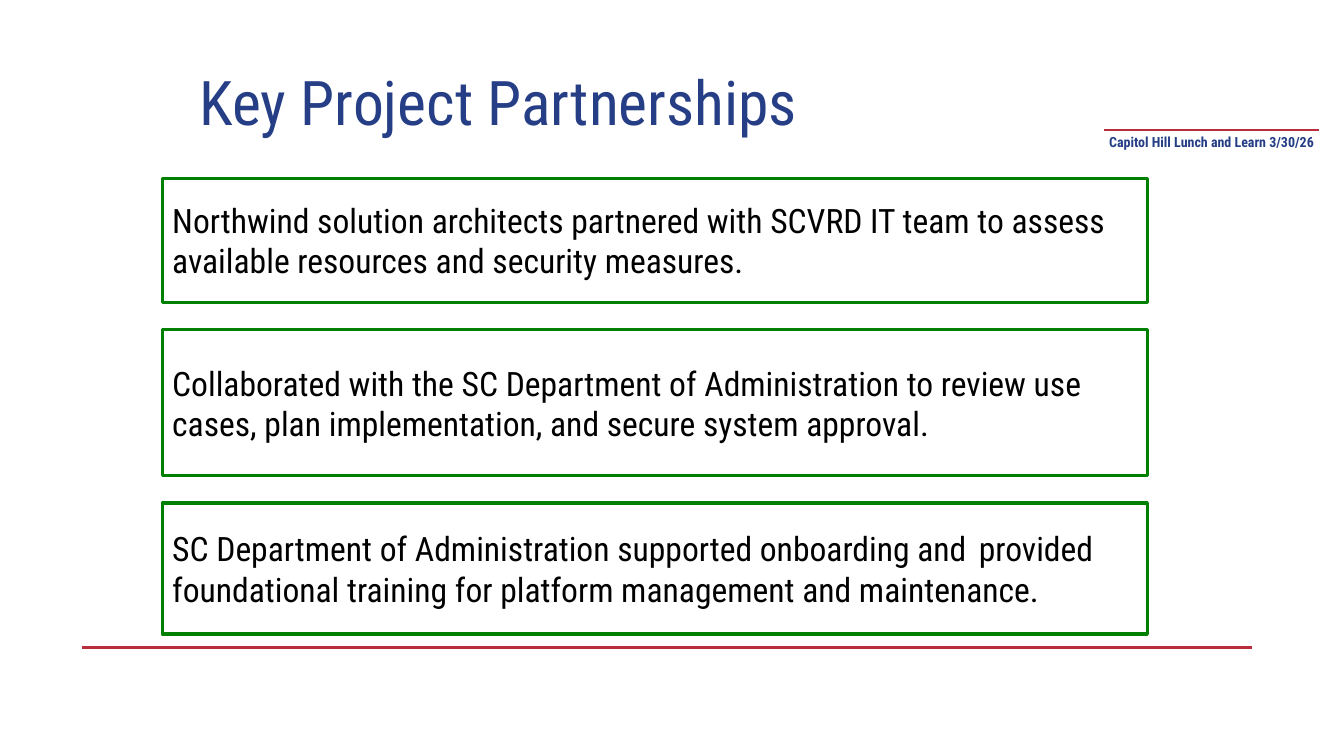
from lxml.etree import SubElement
from pptx import Presentation
from pptx.dml.color import RGBColor
from pptx.enum.shapes import MSO_CONNECTOR as CONNECTOR, MSO_SHAPE as SHAPE
from pptx.enum.text import MSO_ANCHOR as ANCHOR, MSO_AUTO_SIZE as AUTO_SIZE, PP_ALIGN as ALIGN
from pptx.oxml.ns import qn
from pptx.util import Inches, Pt

COLORS = {"navy": "253E85", "red": "B82E3D", "green": "008000",
          "black": "000000", "white": "FFFFFF"}
FONT = "Roboto Condensed"
CARD_LEFT, CARD_TOP, CARD_WIDTH, CARD_GAP = 1.61, 1.77, 9.77, 0.27
PARTNERSHIPS = [
    (1.23, "Northwind solution architects partnered with SCVRD IT team to assess "
           "available resources and security measures."),
    (1.45, "Collaborated with the SC Department of Administration to review use "
           "cases, plan implementation, and secure system approval."),
    (1.3, "SC Department of Administration supported onboarding and \tprovided "
          "foundational training for platform management and maintenance."),
]


def color(name):
    return RGBColor.from_string(COLORS[name])


class PartnershipSlide:
    """Draws the elements of the slide in one shared style."""

    def __init__(self, deck):
        self.slide = deck.slides.add_slide(deck.slide_layouts[5])

    def set_text(self, frame, text, size, ink, align=ALIGN.LEFT, anchor=ANCHOR.MIDDLE,
                 bold=False, margin=0.05):
        frame.word_wrap = True
        frame.auto_size = AUTO_SIZE.NONE
        frame.vertical_anchor = anchor
        frame.margin_left = frame.margin_right = Inches(0.1)
        frame.margin_top = frame.margin_bottom = Inches(margin)
        frame.text = text
        paragraph = frame.paragraphs[0]
        paragraph.alignment = align
        font = paragraph.font
        font.name, font.size, font.bold = FONT, Pt(size), bold
        font.color.rgb = color(ink)
        return paragraph

    def title(self, text, left, top, width, height):
        heading = self.slide.shapes.title
        heading.left, heading.top = Inches(left), Inches(top)
        heading.width, heading.height = Inches(width), Inches(height)
        self.set_text(heading.text_frame, text, 44, "navy").line_spacing = 0.9

    def label(self, text, left, top, width, height):
        event = self.slide.shapes.add_textbox(
            Inches(left), Inches(top), Inches(width), Inches(height))
        self.set_text(event.text_frame, text, 10, "navy", ALIGN.CENTER, ANCHOR.TOP,
                      bold=True, margin=0.1)

    def rule(self, left, right, y, weight):
        line = self.slide.shapes.add_connector(
            CONNECTOR.STRAIGHT, Inches(left), Inches(y), Inches(right), Inches(y))
        line.line.color.rgb = color("red")
        line.line.width = Pt(weight)
        SubElement(line._element.spPr, qn("a:effectLst"))

    def card(self, text, top, height):
        card = self.slide.shapes.add_shape(
            SHAPE.RECTANGLE, Inches(CARD_LEFT), Inches(top),
            Inches(CARD_WIDTH), Inches(height))
        card.shadow.inherit = False
        card.fill.solid()
        card.fill.fore_color.rgb = color("white")
        card.line.color.rgb = color("green")
        card.line.width = Pt(2.25)
        self.set_text(card.text_frame, text, 24, "black")


def main():
    deck = Presentation()
    deck.slide_width, deck.slide_height = Inches(13.33), Inches(7.5)
    page = PartnershipSlide(deck)
    page.rule(0.81, 12.42, 6.42, 2.25)
    page.label("Capitol Hill Lunch and Learn 3/30/26", 10.89, 1.22, 2.25, 0.46)
    page.rule(10.95, 13.08, 1.29, 0.75)
    top = CARD_TOP
    for height, text in PARTNERSHIPS:
        page.card(text, top, height)
        top += height + CARD_GAP
    page.title("Key Project Partnerships", 1.88, 0.32, 8.26, 1.45)
    deck.save("out.pptx")


if __name__ == "__main__":
    main()
